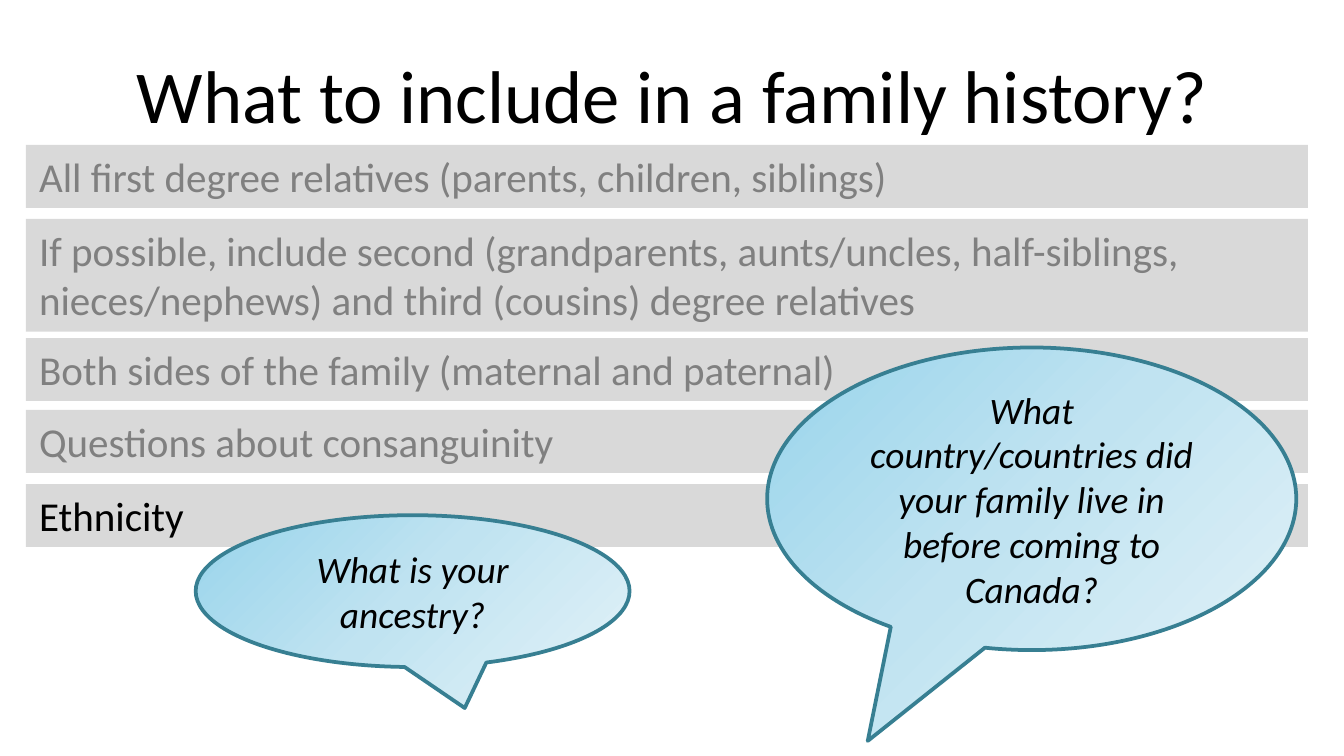
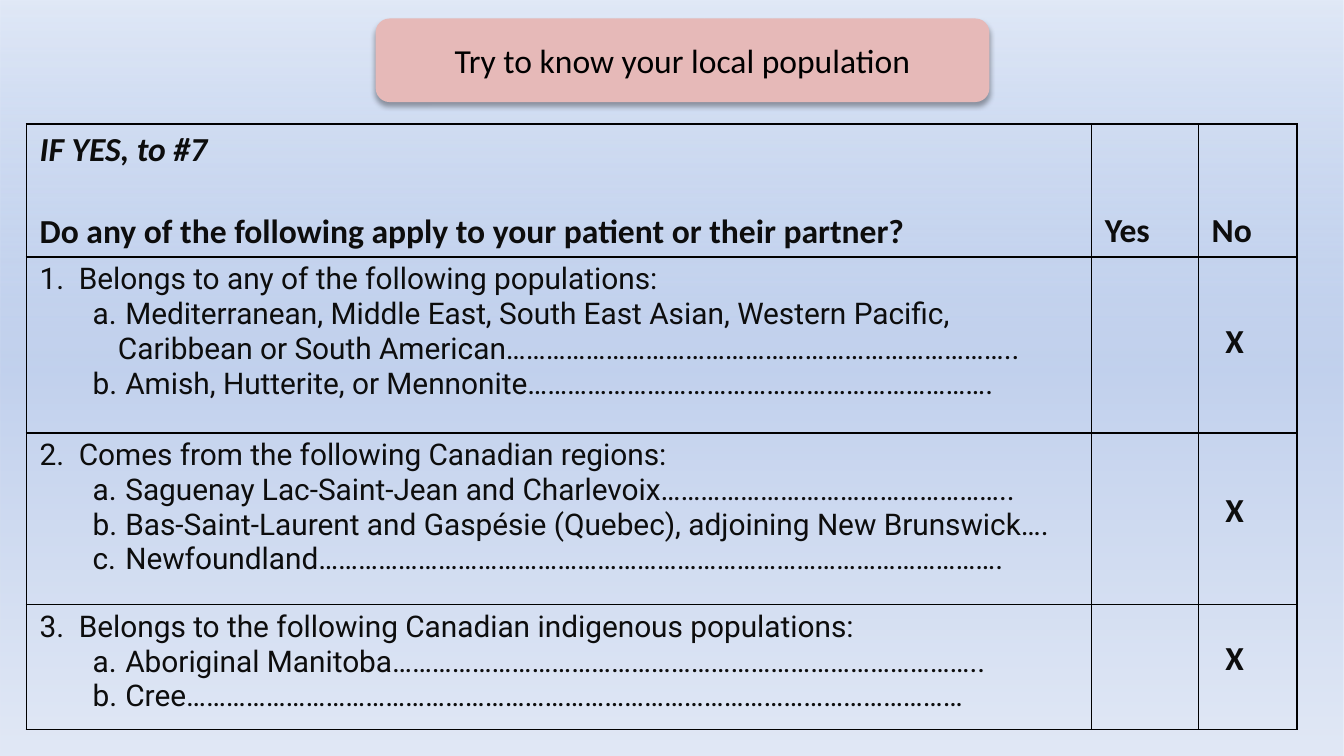
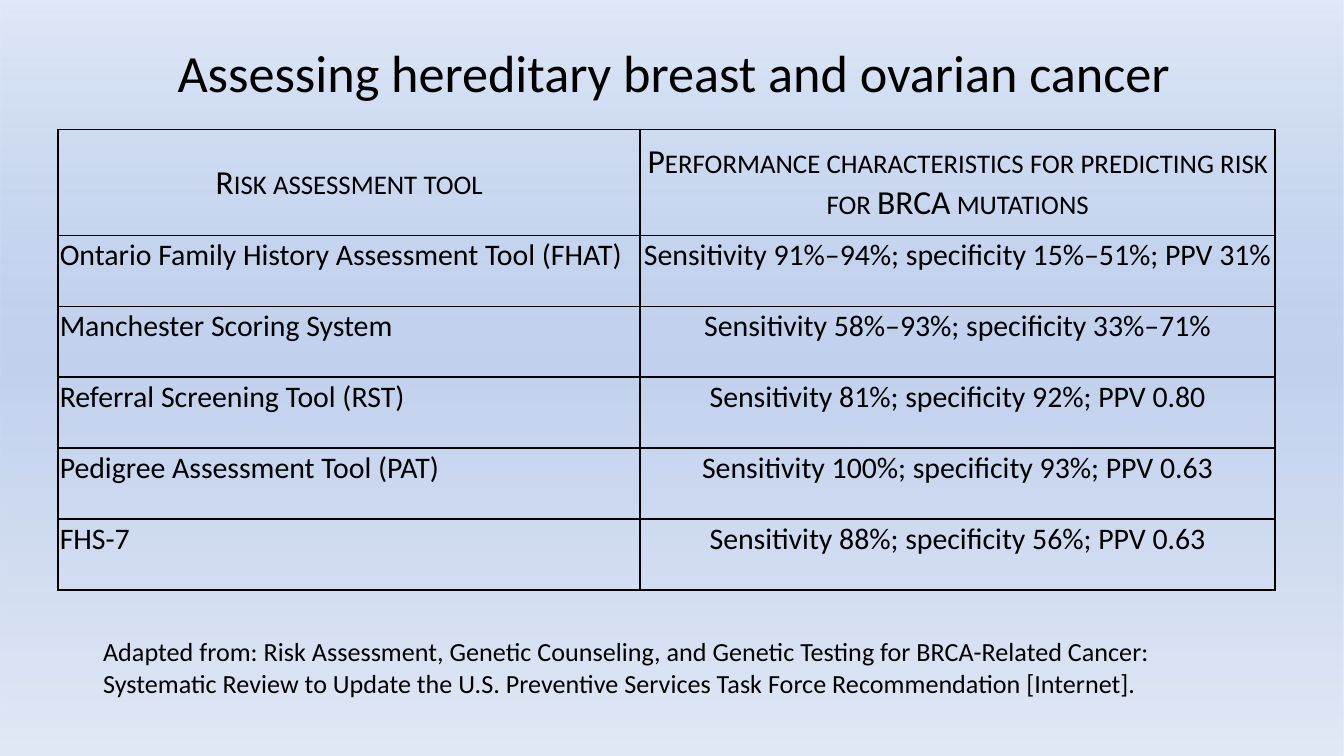
"""Build three slides on taking a family history and assessing hereditary risk."""
from dataclasses import dataclass, replace
from typing import Optional, Sequence

from lxml import etree
from pptx import Presentation
from pptx import util as u
from pptx.dml.color import RGBColor
from pptx.enum import shapes, text
from pptx.oxml.ns import qn

BLACK = RGBColor(0x00, 0x00, 0x00)
INK = RGBColor(0x0D, 0x0D, 0x0D)
FADED = RGBColor(0x80, 0x80, 0x80)
STRIP_GREY = RGBColor(0xD9, 0xD9, 0xD9)
ROSE = RGBColor(0xE6, 0xB9, 0xB8)
TEAL = RGBColor(0x37, 0x7F, 0x92)
BODY_FONT, FORM_FONT = "Calibri", "Roboto"
LEFT, CENTER = text.PP_ALIGN.LEFT, text.PP_ALIGN.CENTER
TOP, MIDDLE, BOTTOM = (text.MSO_ANCHOR.TOP, text.MSO_ANCHOR.MIDDLE,
                       text.MSO_ANCHOR.BOTTOM)
SLIDE_WIDTH, SLIDE_HEIGHT = 25.4, 14.29


@dataclass(frozen=True)
class Area:
    """A rectangle on the slide, in centimetres."""
    left: float
    top: float
    width: float
    height: float

    def lengths(self) -> tuple:
        """Return the four lengths for a python-pptx call."""
        return tuple(u.Cm(n) for n in (self.left, self.top, self.width, self.height))


@dataclass(frozen=True)
class Para:
    """A paragraph with its style; hang and margin are in centimetres."""
    words: str
    size: float = 18
    color: RGBColor = BLACK
    font: str = BODY_FONT
    bold: bool = False
    italic: bool = False
    align: text.PP_ALIGN = LEFT
    before: float = 0
    margin: float = 0
    hang: float = 0
    lettered: bool = False
    small_caps: bool = False


@dataclass(frozen=True)
class Stop:
    """A gradient stop, with position and opacity in percent."""
    position: int
    color: RGBColor
    opacity: int = 100


@dataclass(frozen=True)
class Strip:
    """A grey strip holding one point."""
    top: float
    words: str
    height: float = 1.19
    color: RGBColor = FADED


@dataclass(frozen=True)
class Callout:
    """A speech bubble with the relative position of its tip."""
    area: Area
    tip: tuple
    words: str


@dataclass(frozen=True)
class Entry:
    """The content of one table cell."""
    paras: Sequence[Para] = ()
    anchor: text.MSO_ANCHOR = TOP


SKY = (Stop(0, RGBColor(0x98, 0xD4, 0xEB)), Stop(50, RGBColor(0xC0, 0xE3, 0xF1)),
       Stop(100, RGBColor(0xE0, 0xF1, 0xF7)))
HAZE = (Stop(0, RGBColor(0x9A, 0xB5, 0xE4), 30), Stop(50, RGBColor(0xC2, 0xD1, 0xED)),
        Stop(100, RGBColor(0xE1, 0xE8, 0xF5)))

STRIPS = (
    Strip(2.74, "All first degree relatives (parents, children, siblings)"),
    Strip(4.14, "If possible, include second (grandparents, aunts/uncles, half-siblings, "
                "nieces/nephews) and third (cousins) degree relatives", 2.13),
    Strip(6.39, "Both sides of the family (maternal and paternal)"),
    Strip(7.75, "Questions about consanguinity"),
    Strip(9.15, "Ethnicity", color=BLACK),
)
CALLOUTS = (
    Callout(Area(3.7, 9.74, 8.2, 2.87), (0.12, 0.77), "What is your ancestry?"),
    Callout(Area(14.5, 6.57, 10, 5.72), (-0.31, 0.8),
            "What country/countries did your family live in before coming to Canada?"),
)
QUESTIONS = (
    ("1.\tBelongs to any of the following populations:", (
        " Mediterranean, Middle East, South East Asian, Western Pacific, Caribbean or "
        "South American…………………………………………………………………..",
        " Amish, Hutterite, or Mennonite…………………………………………………………….")),
    ("2.\tComes from the following Canadian regions:", (
        " Saguenay Lac-Saint-Jean and Charlevoix……………………………………………..",
        " Bas-Saint-Laurent and Gaspésie (Quebec), adjoining New Brunswick….",
        " Newfoundland………………………………………………………………………………………….")),
    ("3.\tBelongs to the following Canadian indigenous populations:", (
        " Aboriginal Manitoba……………………………………………………………………………..",
        " Cree………………………………………………………………………………………………………")),
)
MARK_TOPS = (5.92, 9.12, 11.91)
TOOL_HEADINGS = ("Risk assessment tool",
                 "Performance characteristics for predicting risk for BRCA mutations")
TOOLS = (
    ("Ontario Family History Assessment Tool (FHAT)",
     "Sensitivity 91%–94%; specificity 15%–51%; PPV 31%"),
    ("Manchester Scoring System", "Sensitivity 58%–93%; specificity 33%–71%"),
    ("Referral Screening Tool (RST)", "Sensitivity 81%; specificity 92%; PPV 0.80"),
    ("Pedigree Assessment Tool (PAT)", "Sensitivity 100%; specificity 93%; PPV 0.63"),
    ("FHS-7", "Sensitivity 88%; specificity 56%; PPV 0.63"),
)


def add_color(parent, color: RGBColor, opacity: int = 100) -> None:
    """Append a colour element with its opacity in percent."""
    tint = etree.SubElement(parent, qn("a:srgbClr"), val=str(color))
    if opacity < 100:
        etree.SubElement(tint, qn("a:alpha"), val=str(opacity * 1000))


def write(frame, paras: Sequence[Para]) -> None:
    """Fill a text frame with styled paragraphs."""
    for number, para in enumerate(paras):
        line = frame.add_paragraph() if number else frame.paragraphs[0]
        span = line.add_run()
        span.text = para.words
        if para.small_caps:
            span._r.get_or_add_rPr().set("cap", "small")
        line.alignment = para.align
        if para.before:
            line.space_before = u.Pt(para.before)
        properties = line._p.get_or_add_pPr()
        if para.hang:
            properties.set("marL", str(u.Cm(para.margin)))
            properties.set("indent", str(-u.Cm(para.hang)))
        if para.lettered:
            etree.SubElement(properties, qn("a:buAutoNum"), type="alphaLcPeriod")
        line.font.size = u.Pt(para.size)
        line.font.name = para.font
        line.font.color.rgb = para.color
        line.font.bold = para.bold
        line.font.italic = para.italic


def add_text(page, area: Area, para: Para, anchor=TOP) -> None:
    """Add a wrapping text box."""
    frame = page.shapes.add_textbox(*area.lengths()).text_frame
    frame.word_wrap = True
    frame.vertical_anchor = anchor
    write(frame, [para])


def add_title(page, area: Area, words: str, size: float) -> None:
    """Add a centred slide title."""
    add_text(page, area, Para(words, size, align=CENTER), MIDDLE)


def add_box(page, kind, area: Area, fill: Optional[RGBColor] = None,
            para: Optional[Para] = None, anchor=MIDDLE):
    """Add a preset shape without line or shadow."""
    box = page.shapes.add_shape(kind, *area.lengths())
    box.shadow.inherit = False
    box.line.fill.background()
    if fill is not None:
        box.fill.solid()
        box.fill.fore_color.rgb = fill
    if para is not None:
        box.text_frame.word_wrap = True
        box.text_frame.vertical_anchor = anchor
        write(box.text_frame, [para])
    return box


def set_gradient(box, stops: Sequence[Stop], angle: int) -> None:
    """Fill a shape with a linear gradient, its angle counted clockwise."""
    box.fill.gradient()
    box.fill.gradient_angle = 360 - angle
    listing = box._element.spPr.find(qn("a:gradFill")).find(qn("a:gsLst"))
    listing.clear()
    for stop in stops:
        point = etree.SubElement(listing, qn("a:gs"), pos=str(stop.position * 1000))
        add_color(point, stop.color, stop.opacity)


def add_shadow(box) -> None:
    """Give a shape a soft shadow straight below it."""
    effects = box._element.spPr.find(qn("a:effectLst"))
    shadow = etree.SubElement(effects, qn("a:outerShdw"), blurRad=str(u.Pt(3.1)),
                              dist=str(u.Pt(1.8)), dir="5400000", rotWithShape="0")
    add_color(shadow, BLACK, 35)


def add_haze(page) -> None:
    """Cover the page with the blue gradient."""
    cover = add_box(page, shapes.MSO_SHAPE.RECTANGLE,
                    Area(0, 0, SLIDE_WIDTH, SLIDE_HEIGHT))
    set_gradient(cover, HAZE, 90)


def set_borders(cell) -> None:
    """Rule all four sides of a cell in black."""
    properties = cell._tc.get_or_add_tcPr()
    for position, side in enumerate(("lnL", "lnR", "lnT", "lnB")):
        rule = etree.Element(qn(f"a:{side}"), w=str(u.Pt(1)))
        add_color(etree.SubElement(rule, qn("a:solidFill")), BLACK)
        properties.insert(position, rule)


def add_grid(page, left: float, top: float, widths: Sequence[float],
             heights: Sequence[float], rows: Sequence[Sequence[Entry]],
             inset_x: float, inset_y: float) -> None:
    """Add a ruled table without fills."""
    area = Area(left, top, sum(widths), sum(heights))
    grid = page.shapes.add_table(len(heights), len(widths), *area.lengths()).table
    grid.first_row = grid.horz_banding = False
    for column, width in zip(grid.columns, widths):
        column.width = u.Cm(width)
    for row, height, entries in zip(grid.rows, heights, rows):
        row.height = u.Cm(height)
        for cell, entry in zip(row.cells, entries):
            cell.margin_left = cell.margin_right = u.Cm(inset_x)
            cell.margin_top = cell.margin_bottom = u.Cm(inset_y)
            cell.vertical_anchor = entry.anchor
            cell.fill.background()
            set_borders(cell)
            write(cell.text_frame, entry.paras)


def build_contents(page) -> None:
    """Draw the points of a family history with two sample questions."""
    add_title(page, Area(1.27, 0.58, 22.86, 2.39), "What to include in a family history?", 40)
    for strip in STRIPS:
        add_box(page, shapes.MSO_SHAPE.RECTANGLE, Area(0.49, strip.top, 24.23, strip.height),
                STRIP_GREY, Para(strip.words, 22, strip.color), TOP)
    for callout in CALLOUTS:
        bubble = add_box(page, shapes.MSO_SHAPE.OVAL_CALLOUT, callout.area,
                         para=Para(callout.words, 20, italic=True, align=CENTER))
        bubble.adjustments[0], bubble.adjustments[1] = callout.tip
        set_gradient(bubble, SKY, 45)
        bubble.line.color.rgb = TEAL
        bubble.line.width = u.Pt(2)


def build_population(page) -> None:
    """Draw the population questionnaire with its marked answers."""
    add_haze(page)
    strong = Para("", color=INK, bold=True)
    question = Para("", 16, INK, FORM_FONT, margin=0.74, hang=0.74)
    option = replace(question, margin=1.48, hang=0.48, lettered=True)
    rows = [[
        Entry([replace(strong, words="IF YES, to #7", italic=True),
               replace(strong, before=22, words="Do any of the following apply to your "
                                                "patient or their partner?")]),
        *(Entry([replace(strong, words=answer)], BOTTOM) for answer in ("Yes", "No")),
    ]]
    for words, options in QUESTIONS:
        paras = [replace(question, words=words)]
        paras += [replace(option, words=choice) for choice in options]
        rows.append([Entry(paras), Entry(), Entry()])
    add_grid(page, 0.5, 2.34, (20.13, 2.02, 1.86), (2.52, 3.32, 3.25, 2.36), rows, 0.25, 0.1)
    for top in MARK_TOPS:
        add_text(page, Area(22.91, top, 1.19, 1.02), replace(strong, words="X"))
    banner = add_box(page, shapes.MSO_SHAPE.ROUNDED_RECTANGLE, Area(7.1, 0.35, 11.6, 1.58),
                     ROSE, Para("Try to know your local population", align=CENTER))
    add_shadow(banner)


def build_tools(page) -> None:
    """Draw the comparison of risk assessment tools."""
    add_haze(page)
    rows = [[Entry([Para(words, align=CENTER, small_caps=True)], MIDDLE)
             for words in TOOL_HEADINGS]]
    rows += [[Entry([Para(tool, 16)]), Entry([Para(figures, 16, align=CENTER)])]
             for tool, figures in TOOLS]
    add_grid(page, 1.1, 2.45, (11, 12), (2, *[1.34] * len(TOOLS)), rows, 0.03, 0.03)
    add_text(page, Area(1.7, 11.89, 20.6, 1.45), Para(
        "Adapted from: Risk Assessment, Genetic Counseling, and Genetic Testing for "
        "BRCA-Related Cancer: Systematic Review to Update the U.S. Preventive Services "
        "Task Force Recommendation [Internet].", 14))
    add_title(page, Area(0.5, 0.15, 24.46, 2.39),
              "Assessing hereditary breast and ovarian cancer", 28)


def main() -> None:
    """Build and save the deck."""
    deck = Presentation()
    deck.slide_width, deck.slide_height = u.Cm(SLIDE_WIDTH), u.Cm(SLIDE_HEIGHT)
    for build in (build_contents, build_population, build_tools):
        build(deck.slides.add_slide(deck.slide_layouts[6]))
    deck.save("out.pptx")


if __name__ == "__main__":
    main()
